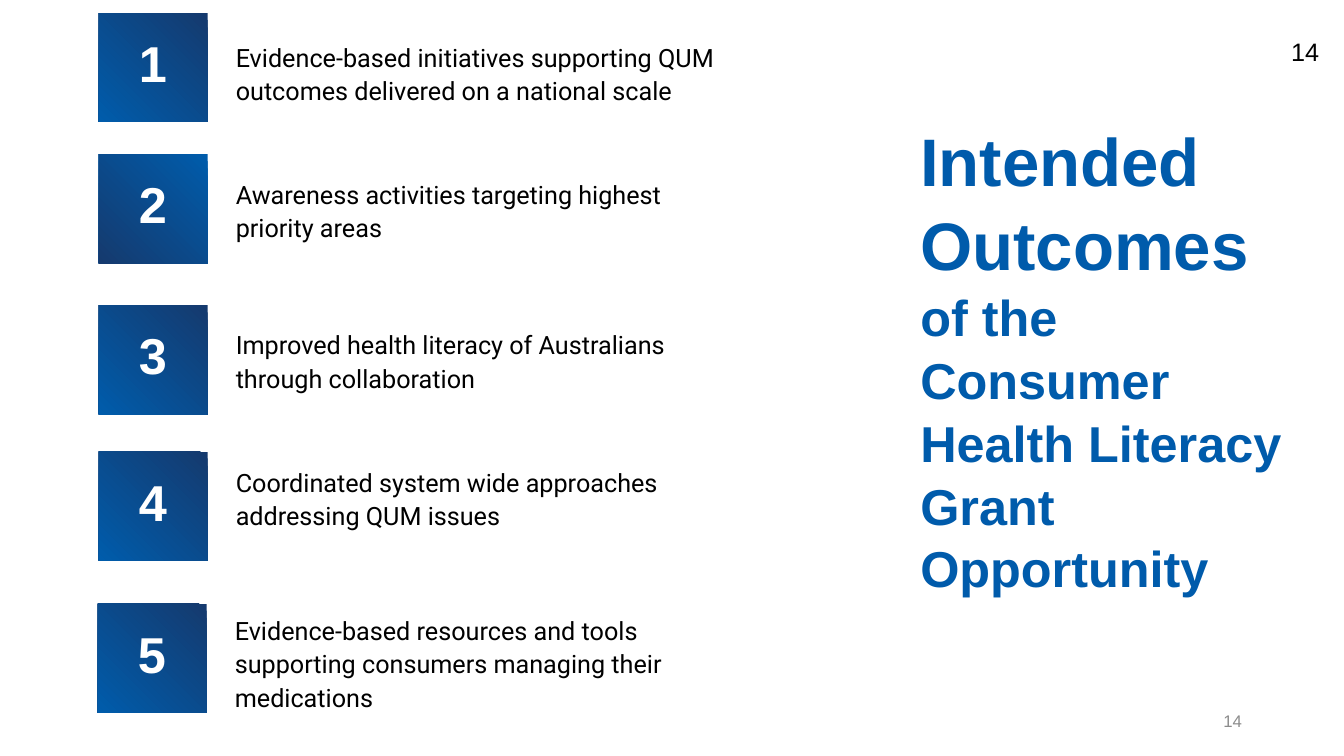
from dataclasses import dataclass

from pptx import Presentation
from pptx.dml.color import RGBColor as RGB
from pptx.enum.shapes import MSO_SHAPE as SHAPE
from pptx.enum.text import MSO_ANCHOR as ANCHOR, MSO_AUTO_SIZE as FIT, PP_ALIGN as ALIGN
from pptx.util import Inches, Pt


@dataclass(frozen=True)
class Theme:
    navy: str = "153A6E"
    blue: str = "005CAB"
    title_blue: str = "005BAB"
    white: str = "FFFFFF"
    black: str = "000000"
    grey: str = "8C8C8C"
    head: str = "Arial"
    body: str = "Roboto"
    title_size: int = 48
    subtitle_size: int = 36
    number_size: int = 36
    text_size: int = 18
    footer_size: int = 12


class Deck:
    """Places elements on one slide; lengths are percentages of its size."""

    def __init__(self, theme):
        self.theme = theme
        self.prs = Presentation()
        self.prs.slide_width, self.prs.slide_height = Inches(13.333), Inches(7.5)
        self.s = self.prs.slides.add_slide(self.prs.slide_layouts[5])

    def box(self, x, y, w, h):
        cols, rows = self.prs.slide_width / 100, self.prs.slide_height / 100
        return int(x * cols), int(y * rows), int(w * cols), int(h * rows)

    def frame(self, sp, anchor, insets):
        tf = sp.text_frame
        tf.word_wrap, tf.auto_size, tf.vertical_anchor = True, FIT.NONE, anchor
        (tf.margin_left, tf.margin_top,
         tf.margin_right, tf.margin_bottom) = map(Inches, insets)
        return tf

    def run(self, p, text, size, color, font, bold=False):
        r = p.add_run()
        r.text = text
        r.font.name, r.font.size, r.font.bold = font, Pt(size), bold
        r.font.color.rgb = RGB.from_string(color)
        return r

    def text(self, shapes, box, text, size, color, font, bold=False, align=ALIGN.LEFT,
             anchor=ANCHOR.TOP, insets=(0.1, 0.05, 0.1, 0.05), spacing=1.0):
        tf = self.frame(shapes.add_textbox(*self.box(*box)), anchor, insets)
        p = tf.paragraphs[0]
        p.alignment, p.line_spacing = align, spacing
        return self.run(p, text, size, color, font, bold)

    def tile(self, shapes, box, stops):
        sp = shapes.add_shape(SHAPE.RECTANGLE, *self.box(*box))
        sp.shadow.inherit = False
        sp.line.fill.background()
        sp.fill.gradient()
        sp.fill.gradient_angle = 225
        for stop, color in zip(sp.fill.gradient_stops, stops):
            stop.color.rgb = RGB.from_string(color)

    def outcome(self, number, x, y, middle, text, stops):
        t = self.theme
        shapes = self.s.shapes.add_group_shape().shapes
        self.tile(shapes, (x, y, 8.1, 14.4), stops)
        self.text(shapes, (x + 9.97, middle - 4.13, 36.75, 8.26), text, t.text_size,
                  t.black, t.body, anchor=ANCHOR.MIDDLE, insets=[0.03] * 4, spacing=1.1)
        r = self.text(shapes, (x + 0.53, y + 2.27, 6.98, 10.93), str(number),
                      t.number_size, t.white, t.head, True, ALIGN.CENTER,
                      ANCHOR.BOTTOM, (0.03, 0, 0.03, 0.2), Pt(68))
        r.font._element.set("spc", "-210")

    def title(self, box, paragraphs):
        t = self.theme
        sp = self.s.shapes.title
        sp.left, sp.top, sp.width, sp.height = self.box(*box)
        tf = self.frame(sp, ANCHOR.TOP, (0.03, 0.05, 0.03, 0.05))
        for i, runs in enumerate(paragraphs):
            p = tf.add_paragraph() if i else tf.paragraphs[0]
            p.alignment, p.line_spacing = ALIGN.LEFT, 1.04
            for text, size in runs:
                self.run(p, text, size, t.title_blue, t.head, True)


def main():
    t = Theme()
    deck = Deck(t)

    # Numbered outcomes: left, tile top, text middle, wording
    outcomes = [
        (7.35, 1.73, 9.6, "Evidence-based initiatives supporting QUM outcomes "
                          "delivered on a national scale"),
        (7.35, 20.4, 27.73, "Awareness activities targeting highest priority areas"),
        (7.35, 40.4, 47.6, "Improved health literacy of Australians "
                           "through collaboration"),
        (7.35, 59.73, 65.8, "Coordinated system wide approaches "
                            "addressing QUM issues"),
        (7.28, 79.87, 87.6, "Evidence-based resources and tools supporting "
                            "consumers managing their medications"),
    ]
    for number, (x, y, middle, text) in enumerate(outcomes, 1):
        stops = (t.blue, t.navy) if number == 2 else (t.navy, t.blue)
        deck.outcome(number, x, y, middle, text, stops)

    # Title
    deck.title((68.25, 14.67, 29.62, 13.2), [
        [("Intended Outcomes ", t.title_size),
         ("of the Consumer Health Literacy", t.subtitle_size)],
        [("Grant Opportunity", t.subtitle_size)],
    ])

    # Slide numbers
    deck.text(deck.s.shapes, (70.65, 92.67, 22.5, 5.33), "14", t.footer_size, t.grey,
              t.head, align=ALIGN.RIGHT, anchor=ANCHOR.MIDDLE)
    deck.text(deck.s.shapes, (95.33, 4.13, 3.75, 5.33), "14", t.text_size, t.black, t.head)

    deck.prs.save("out.pptx")


if __name__ == "__main__":
    main()
